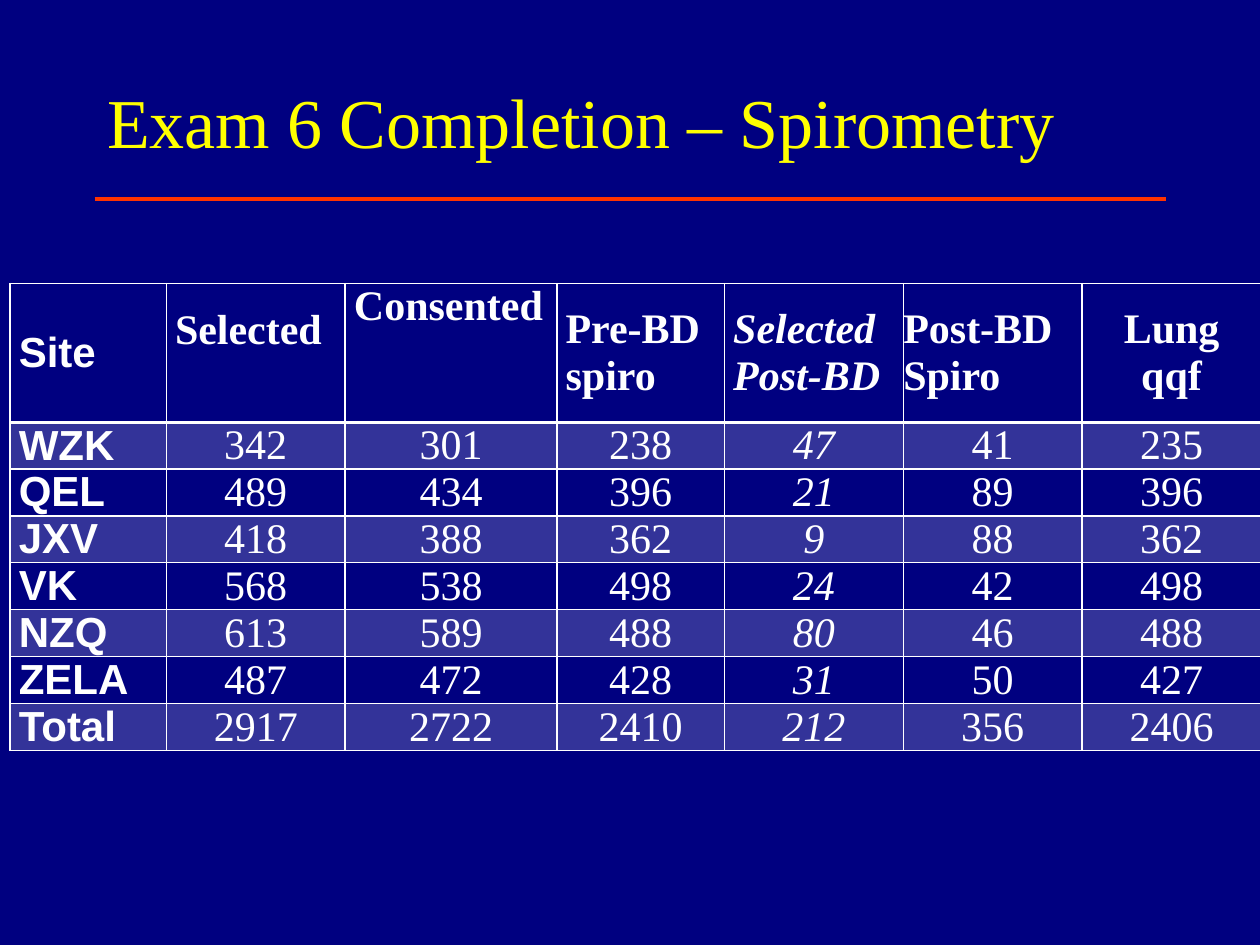
from lxml.etree import SubElement
from pptx import Presentation
from pptx.dml.color import RGBColor
from pptx.enum.shapes import MSO_CONNECTOR
from pptx.enum.text import MSO_ANCHOR, PP_ALIGN
from pptx.oxml import parse_xml
from pptx.oxml.ns import nsdecls, qn
from pptx.util import Inches, Pt

COLORS = {"navy": "000080", "white": "FFFFFF", "yellow": "FFFF00", "rule": "FF3300"}
SERIF, SANS = "Times New Roman", "Arial"

TITLE = "Exam 6 Completion – Spirometry"
HEADERS = ["Site", "Selected", "Consented", "Pre-BD spiro",
           "Selected\vPost-BD", "Post-BD \vSpiro", "Lung qqf"]
SITES = [
    ("WZK", 342, 301, 238, 47, 41, 235),
    ("QEL", 489, 434, 396, 21, 89, 396),
    ("JXV", 418, 388, 362, 9, 88, 362),
    ("VK", 568, 538, 498, 24, 42, 498),
    ("NZQ", 613, 589, 488, 80, 46, 488),
    ("ZELA", 487, 472, 428, 31, 50, 427),
    ("Total", 2917, 2722, 2410, 212, 356, 2406),
]
COLUMN_WIDTHS = [1.24, 1.42, 1.68, 1.33, 1.42, 1.42, 1.42]
HEADER_HEIGHT, SITE_HEIGHT = 1.1, 0.37
TOP_OFFSETS = {1: 0.19, 2: 0}
SITE_COLUMN, ITALIC_COLUMN, FLUSH_COLUMN, LUNG_COLUMN = 0, 4, 5, 6


def rgb(name):
    return RGBColor.from_string(COLORS[name])


def style_text(frame, size, color, font, align, bold=False, italic=False):
    for paragraph in frame.paragraphs:
        paragraph.alignment = align
        for run in paragraph.runs:
            run.font.size = Pt(size)
            run.font.name = font
            run.font.bold = bold
            run.font.italic = italic
            run.font.color.rgb = rgb(color)


def set_borders(cell, widths):
    properties = cell._tc.get_or_add_tcPr()
    for position, (side, width) in enumerate(widths.items()):
        properties.insert(position, parse_xml(
            f'<a:ln{side} {nsdecls("a")} w="{Pt(width)}"><a:solidFill>'
            f'<a:srgbClr val="{COLORS["white"]}"/></a:solidFill></a:ln{side}>'))


def shade(cell, striped):
    if not striped:
        cell.fill.background()
        return
    cell.fill.solid()
    cell.fill.fore_color.rgb = rgb("white")
    tint = cell._tc.tcPr.find(".//" + qn("a:srgbClr"))
    SubElement(tint, qn("a:alpha"), val="20000")


def fill_cell(cell, value, row, column):
    header, site = row == 0, column == SITE_COLUMN
    cell.text_frame.text = str(value)
    centered = column == LUNG_COLUMN if header else not site
    style_text(cell.text_frame, 24, "white", SANS if site else SERIF,
               PP_ALIGN.CENTER if centered else PP_ALIGN.LEFT,
               bold=header or site, italic=column == ITALIC_COLUMN)
    flush = column == FLUSH_COLUMN if header else not site
    cell.margin_left = cell.margin_right = Inches(0 if flush else 0.07)
    cell.margin_top = cell.margin_bottom = 0
    if header and column in TOP_OFFSETS:
        cell.vertical_anchor = MSO_ANCHOR.TOP
        cell.margin_top = Inches(TOP_OFFSETS[column])
    elif header:
        cell.vertical_anchor = MSO_ANCHOR.MIDDLE
    else:
        cell.vertical_anchor = MSO_ANCHOR.TOP if site else MSO_ANCHOR.BOTTOM
    shade(cell, row % 2 == 1)
    set_borders(cell, {"L": 1, "R": 1, "T": 2 if row == 1 else 1, "B": 2 if header else 1})


def add_title(slide):
    title = slide.shapes.title
    title.left, title.top, title.width, title.height = map(Inches, (0.75, 0.33, 8.5, 1.25))
    title.text_frame.text = TITLE
    title.text_frame.vertical_anchor = MSO_ANCHOR.MIDDLE
    style_text(title.text_frame, 40, "yellow", SERIF, PP_ALIGN.LEFT)


def add_rule(slide):
    rule = slide.shapes.add_connector(
        MSO_CONNECTOR.STRAIGHT, Inches(0.75), Inches(1.58), Inches(9.25), Inches(1.58))
    rule.line.color.rgb = rgb("rule")
    rule.line.width = Pt(2)
    SubElement(rule._element.spPr, qn("a:effectLst"))


def add_completion_table(slide):
    rows = [HEADERS, *SITES]
    heights = [HEADER_HEIGHT] + [SITE_HEIGHT] * len(SITES)
    completion = slide.shapes.add_table(
        len(rows), len(HEADERS), Inches(0.08), Inches(2.25),
        Inches(sum(COLUMN_WIDTHS)), Inches(sum(heights))).table
    completion.horz_banding = False
    for column, width in zip(completion.columns, COLUMN_WIDTHS):
        column.width = Inches(width)
    for row, height in zip(completion.rows, heights):
        row.height = Inches(height)
    for r, values in enumerate(rows):
        for c, value in enumerate(values):
            fill_cell(completion.cell(r, c), value, r, c)


def main():
    deck = Presentation()
    deck.slide_width, deck.slide_height = Inches(10), Inches(7.5)
    slide = deck.slides.add_slide(deck.slide_layouts[5])
    slide.background.fill.solid()
    slide.background.fill.fore_color.rgb = rgb("navy")
    add_title(slide)
    add_rule(slide)
    add_completion_table(slide)
    deck.save("out.pptx")


if __name__ == "__main__":
    main()
